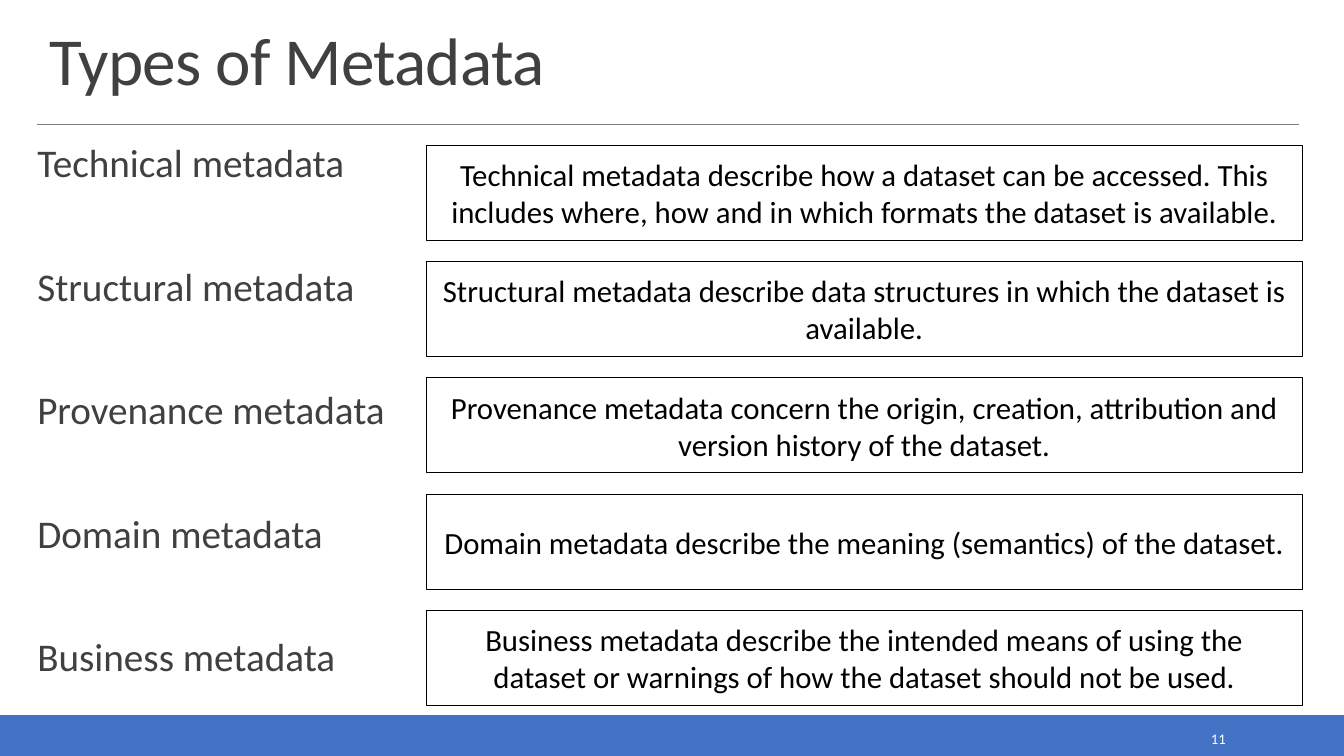
from pptx import Presentation
from pptx.dml.color import RGBColor
from pptx.enum.shapes import MSO_CONNECTOR, MSO_SHAPE
from pptx.enum.text import MSO_ANCHOR, MSO_AUTO_SIZE, PP_ALIGN
from pptx.oxml.ns import qn
from pptx.util import Cm, Pt
from lxml import etree

# Content
TITLE = "Types of Metadata"
PAGE = "11"
TYPES = [
    ("Technical metadata",
     "Technical metadata describe how a dataset can be accessed. This includes "
     "where, how and in which formats the dataset is available."),
    ("Structural metadata",
     "Structural metadata describe data structures in which the dataset is available."),
    ("Provenance metadata",
     "Provenance metadata concern the origin, creation, attribution and version "
     "history of the dataset."),
    ("Domain metadata",
     "Domain metadata describe the meaning (semantics) of the dataset."),
    ("Business metadata",
     "Business metadata describe the intended means of using the dataset or "
     "warnings of how the dataset should not be used."),
]

# Style
FONT = "Calibri"
BLUE = RGBColor(0x44, 0x72, 0xC4)
GREY = RGBColor(0x80, 0x80, 0x80)
DARK = RGBColor(0x40, 0x40, 0x40)
BLACK = RGBColor(0, 0, 0)
WHITE = RGBColor(0xFF, 0xFF, 0xFF)
RECT = MSO_SHAPE.RECTANGLE
LEFT, CENTER, RIGHT = PP_ALIGN.LEFT, PP_ALIGN.CENTER, PP_ALIGN.RIGHT
TOP, MIDDLE, BOTTOM = MSO_ANCHOR.TOP, MSO_ANCHOR.MIDDLE, MSO_ANCHOR.BOTTOM

# Layout in cm
SLIDE_W, SLIDE_H = 33.87, 19.05
FOOTER_H = 1.02
BOX_X, BOX_Y, BOX_W, BOX_H = 10.74, 3.66, 22.08, 2.4
BOX_PITCH = 2.93
LABEL_GAP = 57.9  # points between labels


def prepare(tf, anchor):
    tf.word_wrap = True
    tf.auto_size = MSO_AUTO_SIZE.NONE
    tf.vertical_anchor = anchor


def write(p, text, size, color, align):
    p.alignment = align
    r = p.add_run()
    r.text = text
    r.font.name = FONT
    r.font.size = Pt(size)
    r.font.color.rgb = color
    return r


def add_rect(s, x, y, w, h, line, width):
    sp = s.shapes.add_shape(RECT, Cm(x), Cm(y), Cm(w), Cm(h))
    sp.shadow.inherit = False
    sp.fill.background()
    sp.line.color.rgb = line
    sp.line.width = Pt(width)
    return sp


def main():
    prs = Presentation()
    prs.slide_width, prs.slide_height = Cm(SLIDE_W), Cm(SLIDE_H)
    s = prs.slides.add_slide(prs.slide_layouts[5])

    # Footer band and title rule
    band = add_rect(s, 0, SLIDE_H - FOOTER_H, SLIDE_W, FOOTER_H, BLUE, 1.25)
    band.fill.solid()
    band.fill.fore_color.rgb = BLUE
    rule = s.shapes.add_connector(MSO_CONNECTOR.STRAIGHT,
                                  Cm(0.94), Cm(3.13), Cm(32.74), Cm(3.13))
    rule.line.color.rgb = GREY
    rule.line.width = Pt(0.5)
    etree.SubElement(rule.element.spPr, qn("a:effectLst"))

    # Title
    title = s.shapes.title
    title.left, title.top = Cm(0.99), Cm(0.51)
    title.width, title.height = Cm(31.8), Cm(2.13)
    prepare(title.text_frame, BOTTOM)
    p = title.text_frame.paragraphs[0]
    p.line_spacing = 0.85
    r = write(p, TITLE, 48, DARK, LEFT)
    r.font.element.set("spc", "-50") if hasattr(r.font, "element") else \
        r._r.get_or_add_rPr().set("spc", "-50")

    # Type names
    names = s.shapes.add_textbox(Cm(0.94), Cm(3.53), Cm(10.21), Cm(14))
    tf = names.text_frame
    prepare(tf, TOP)
    tf.margin_left = tf.margin_right = 0
    tf.margin_top = tf.margin_bottom = Cm(0.1)
    for i, (name, _) in enumerate(TYPES):
        p = tf.add_paragraph() if i else tf.paragraphs[0]
        p.line_spacing = 0.9
        p.space_before = Pt(LABEL_GAP if i else 0)
        write(p, name, 28, DARK, LEFT)

    # Page number
    number = s.shapes.add_textbox(Cm(27.51), Cm(18.26), Cm(3.63), Cm(0.71))
    prepare(number.text_frame, MIDDLE)
    write(number.text_frame.paragraphs[0], PAGE, 10.5, WHITE, RIGHT)

    # Descriptions
    for i, (_, description) in enumerate(TYPES):
        box = add_rect(s, BOX_X, BOX_Y + i * BOX_PITCH, BOX_W, BOX_H, BLACK, 0.75)
        prepare(box.text_frame, MIDDLE)
        write(box.text_frame.paragraphs[0], description, 22, BLACK, CENTER)

    prs.save("out.pptx")


if __name__ == "__main__":
    main()
